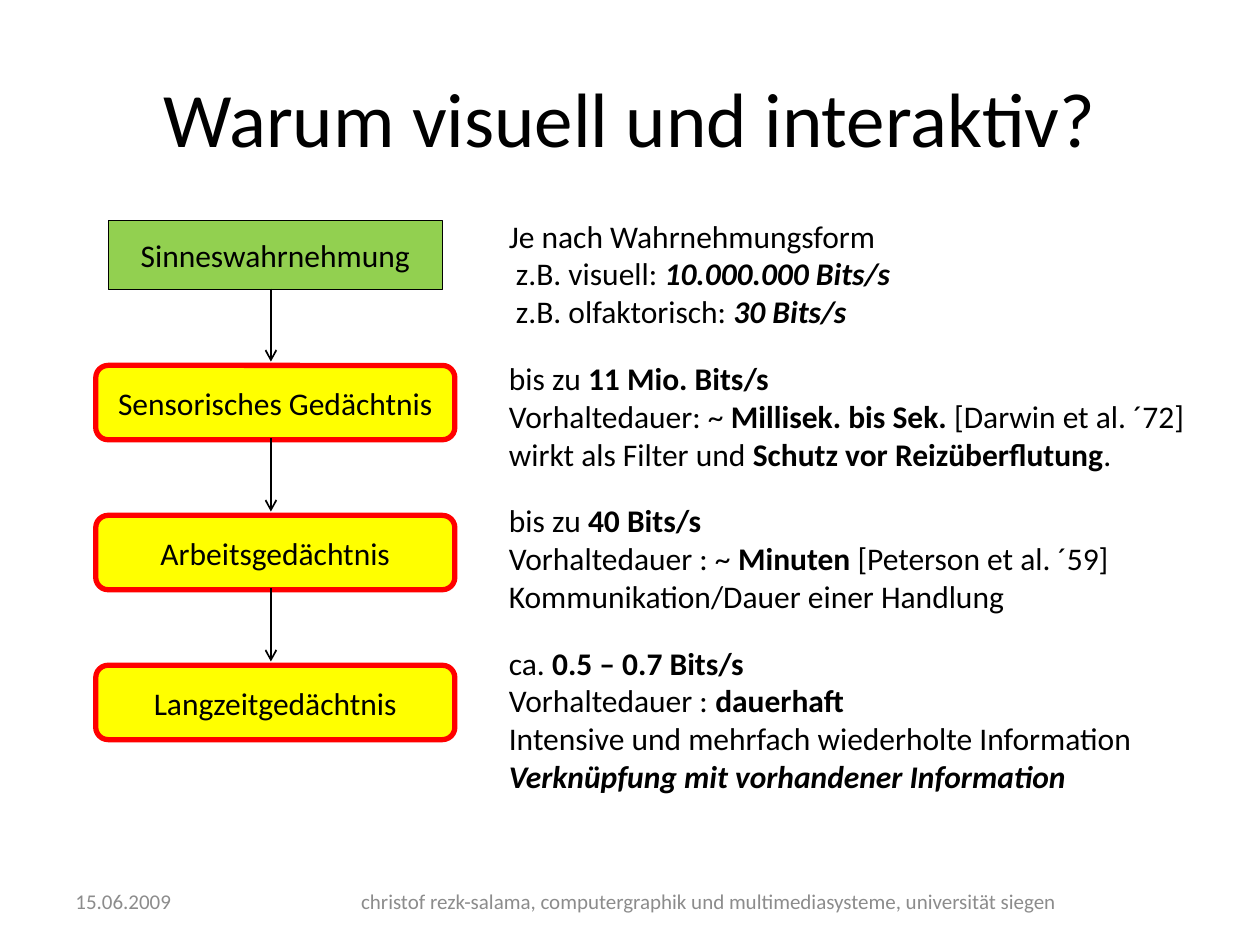
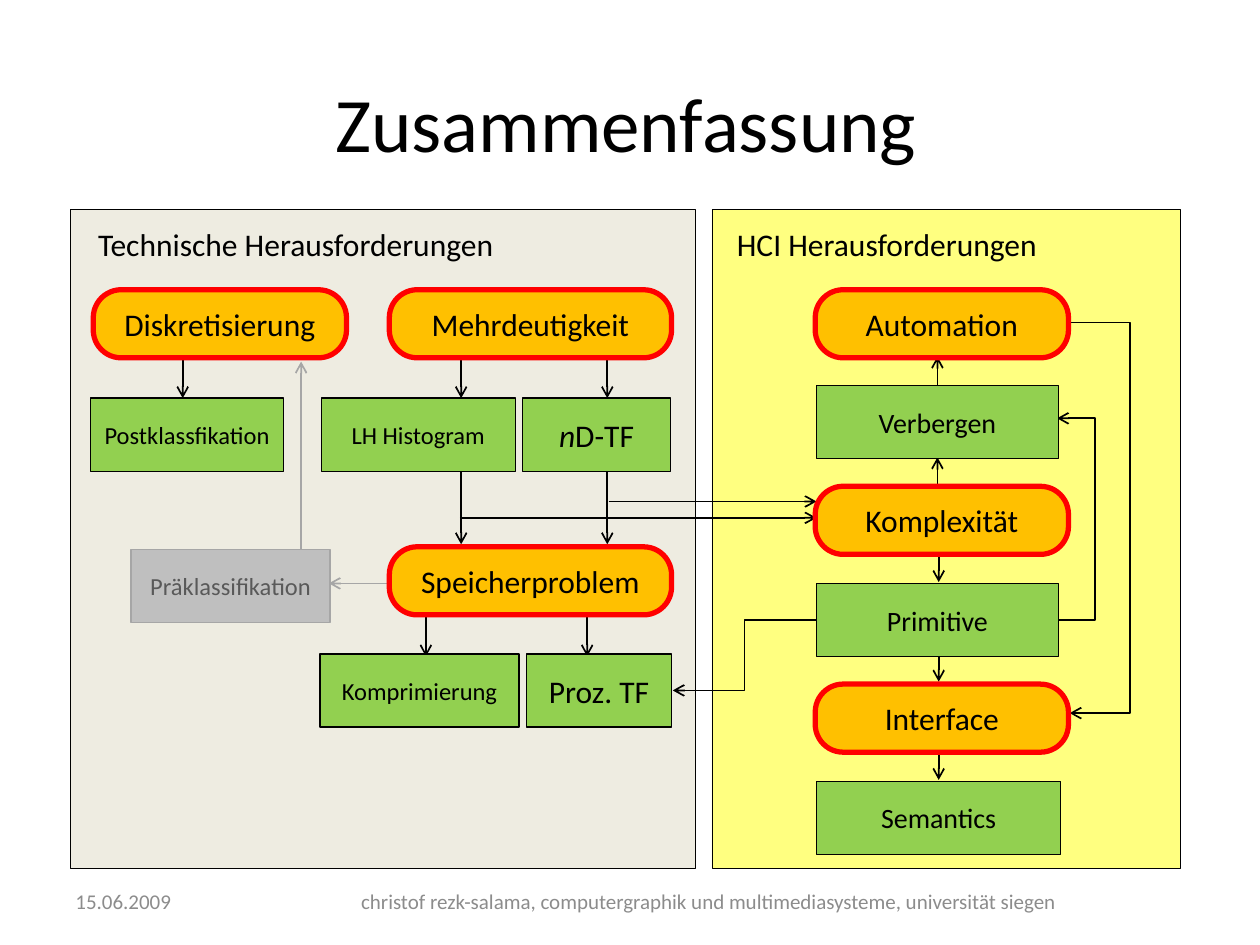
import pptx
import pptx.dml.color
import pptx.enum.shapes
import pptx.enum.text
import pptx.oxml
import pptx.oxml.ns
import pptx.util
from lxml import etree

Inches = pptx.util.Inches
Pt = pptx.util.Pt
rgb = pptx.dml.color.RGBColor.from_string
SHAPE = pptx.enum.shapes.MSO_SHAPE
CONNECTOR = pptx.enum.shapes.MSO_CONNECTOR
ALIGN = pptx.enum.text.PP_ALIGN
ANCHOR = pptx.enum.text.MSO_ANCHOR

BLACK, RED, GREY = "000000", "FF0000", "A6A6A6"
GREEN, YELLOW, ORANGE = "92D050", "FFFF00", "FFC000"
DATE = "15.06.2009"
AUTHOR = "christof rezk-salama, computergraphik und multimediasysteme, universität siegen"


def add_box(slide, at, paragraphs=(), size=18, color=BLACK, preset=None, fill=None,
            line=(BLACK, 0.75), align=ALIGN.CENTER, anchor=ANCHOR.MIDDLE):
    """Add a text box, or a preset shape; a paragraph is a list of (text, "b"/"i" flags)."""
    place = [Inches(length) for length in at]
    if preset is None:
        box = slide.shapes.add_textbox(*place)
    else:
        box = slide.shapes.add_shape(preset, *place)
        box.shadow.inherit = False
        box.fill.solid()
        box.fill.fore_color.rgb = rgb(fill)
        box.line.color.rgb = rgb(line[0])
        box.line.width = Pt(line[1])
    frame = box.text_frame
    frame.word_wrap = True
    frame.vertical_anchor = anchor
    for index, runs in enumerate(paragraphs):
        paragraph = frame.add_paragraph() if index else frame.paragraphs[0]
        paragraph.alignment = align
        paragraph.font.name = "Calibri"
        paragraph.font.size = Pt(size)
        paragraph.font.color.rgb = rgb(color)
        for text, flags in runs:
            run = paragraph.add_run()
            run.text = text
            if "b" in flags:
                run.font.bold = True
            if "i" in flags:
                run.font.italic = True
    return box


def add_arrow(slide, points, color=BLACK, kind=CONNECTOR.STRAIGHT):
    """Add a connector through two points or an open outline through more."""
    points = [(Inches(x), Inches(y)) for x, y in points]
    if len(points) == 2:
        arrow = slide.shapes.add_connector(kind, *points[0], *points[1])
    else:
        builder = slide.shapes.build_freeform(*points[0])
        builder.add_line_segments(points[1:], close=False)
        arrow = builder.convert_to_shape()
        arrow.fill.background()
    arrow.line.color.rgb = rgb(color)
    arrow.line.width = Pt(1)
    properties = arrow._element.spPr
    outline = properties.find(pptx.oxml.ns.qn("a:ln"))
    etree.SubElement(outline, pptx.oxml.ns.qn("a:tailEnd"), type="arrow")
    etree.SubElement(properties, pptx.oxml.ns.qn("a:effectLst"))


deck = pptx.Presentation()
deck.slide_width = Inches(10)
deck.slide_height = Inches(7.5)

# Titles and footers
slides = []
for title, left, top in [("Warum visuell und interaktiv?", 0.5, 0.3),
                         ("Zusammenfassung", 0.47, 0.34)]:
    slide = deck.slides.add_slide(deck.slide_layouts[6])
    add_box(slide, (left, top, 9, 1.25), [[(title, "")]], size=44)
    add_box(slide, (0.5, 6.95, 1.92, 0.4), [[(DATE, "")]], 12, "8C8C8C", align=ALIGN.LEFT)
    add_box(slide, (2.5, 6.95, 6.25, 0.4), [[(AUTHOR, "")]], 12, "8C8C8C")
    slides.append(slide)
memory, summary = slides

# Slide 1: stages of memory
add_box(memory, (0.86, 1.75, 2.65, 0.55), [[("Sinneswahrnehmung", "")]],
        preset=SHAPE.RECTANGLE, fill=GREEN)
stages = ["Sensorisches Gedächtnis", "Arbeitsgedächtnis", "Langzeitgedächtnis"]
for index, stage in enumerate(stages):
    step = 1.19 * index
    add_box(memory, (0.76, 2.9 + step, 2.85, 0.59), [[(stage, "")]],
            preset=SHAPE.ROUNDED_RECTANGLE, fill=YELLOW, line=(RED, 3))
    add_arrow(memory, [(2.15, 2.29 + step), (2.15, 2.87 + step)])

stage_notes = [
    [[("Je nach Wahrnehmungsform", "")],
     [(" z.B. visuell:", ""), (" 10.000.000 Bits/s", "bi")],
     [(" z.B. olfaktorisch:", ""), (" 30 Bits/s", "bi")]],
    [[("bis zu ", ""), ("11 Mio. Bits/s", "b")],
     [("Vorhaltedauer: ~ ", ""), ("Millisek. bis Sek. ", "b"), ("[Darwin et al. ´72]", "")],
     [("wirkt als Filter und ", ""), ("Schutz vor Reizüberflutung", "b"), (".", "")]],
    [[("bis zu ", ""), ("40 Bits/s", "b")],
     [("Vorhaltedauer : ~ ", ""), ("Minuten ", "b"), ("[Peterson et al. ´59]", "")],
     [("Kommunikation/Dauer einer Handlung", "")]],
    [[("ca. ", ""), ("0.5 – 0.7 Bits/s", "b")],
     [("Vorhaltedauer : ", ""), ("dauerhaft", "b")],
     [("Intensive und mehrfach wiederholte Information", "")],
     [("Verknüpfung mit vorhandener Information", "bi")]],
]
for index, note in enumerate(stage_notes):
    add_box(memory, (3.94, 1.67 + 1.13 * index, 5.61, 0.1 + 0.3 * len(note)), note,
            align=ALIGN.LEFT, anchor=ANCHOR.TOP)

# Slide 2: panels of challenges
for heading, left, width, fill, indent in [
        ("Technische Herausforderungen", 0.56, 4.96, "EEECE1", 0.12),
        ("HCI Herausforderungen", 5.65, 3.72, "FFFF80", 0.1)]:
    add_box(summary, (left, 1.66, width, 5.23), preset=SHAPE.RECTANGLE,
            fill=fill, line=(BLACK, 0.25))
    add_box(summary, (left + indent, 1.74, 3.38, 0.4), [[(heading, "")]],
            align=ALIGN.LEFT, anchor=ANCHOR.TOP)

# Arrows lie beneath the boxes they join
vertical_arrows = [
    (1.45, 2.59, 3.16), (3.66, 2.59, 3.16), (4.82, 2.59, 3.16),
    (3.66, 3.74, 4.32), (4.82, 3.74, 4.32),
    (3.38, 4.63, 5.21), (4.66, 4.63, 5.21),
    (7.44, 3.28, 2.83), (7.44, 4.08, 3.63),
    (7.45, 4.04, 4.62), (7.45, 4.83, 5.41), (7.45, 5.62, 6.19),
]
for x, start, end in vertical_arrows:
    add_arrow(summary, [(x, start), (x, end)])
add_arrow(summary, [(2.39, 4.36), (2.39, 2.87)], GREY)
add_arrow(summary, [(3.46, 4.63), (2.61, 4.63)], GREY)
add_arrow(summary, [(4.83, 3.98), (6.48, 3.98)])
add_arrow(summary, [(3.65, 4.11), (6.48, 4.11)])
add_arrow(summary, [(6.48, 4.92), (5.34, 5.48)], kind=CONNECTOR.ELBOW)
add_arrow(summary, [(8.5, 2.56), (8.97, 2.56), (8.97, 5.66), (8.49, 5.66)])
add_arrow(summary, [(8.4, 4.92), (8.69, 4.92), (8.69, 3.32), (8.39, 3.32)])

challenges = [
    ("Diskretisierung", 0.74, 2.3, 2.01), ("Mehrdeutigkeit", 3.09, 2.3, 2.24),
    ("Speicherproblem", 3.09, 4.34, 2.24), ("Automation", 6.47, 2.3, 2.01),
    ("Komplexität", 6.47, 3.86, 2.01), ("Interface", 6.47, 5.43, 2.01),
]
for challenge, left, top, width in challenges:
    capsule = add_box(summary, (left, top, width, 0.54), [[(challenge, "")]],
                      preset=SHAPE.ROUNDED_RECTANGLE, fill=ORANGE, line=(RED, 3))
    capsule.adjustments[0] = 0.41

approaches = [
    ([("Postklassfikation", "")], 0.72, 3.16, 1.53, 14),
    ([("LH Histogram", "")], 2.55, 3.16, 1.54, 14),
    ([("n", "i"), ("D-TF", "")], 4.15, 3.16, 1.17, 18),
    ([("Komprimierung", "")], 2.54, 5.19, 1.58, 14),
    ([("Proz. TF", "")], 4.18, 5.19, 1.15, 18),
    ([("Verbergen", "")], 6.48, 3.06, 1.92, 16),
    ([("Primitive", "")], 6.48, 4.63, 1.92, 16),
    ([("Semantics", "")], 6.48, 6.2, 1.94, 16),
]
for approach, left, top, width, size in approaches:
    add_box(summary, (left, top, width, 0.58), [approach], size,
            preset=SHAPE.RECTANGLE, fill=GREEN)
add_box(summary, (1.04, 4.36, 1.58, 0.58), [[("Präklassifikation", "")]], 14, "595959",
        SHAPE.RECTANGLE, "BFBFBF", (GREY, 0.75))

deck.save("out.pptx")
